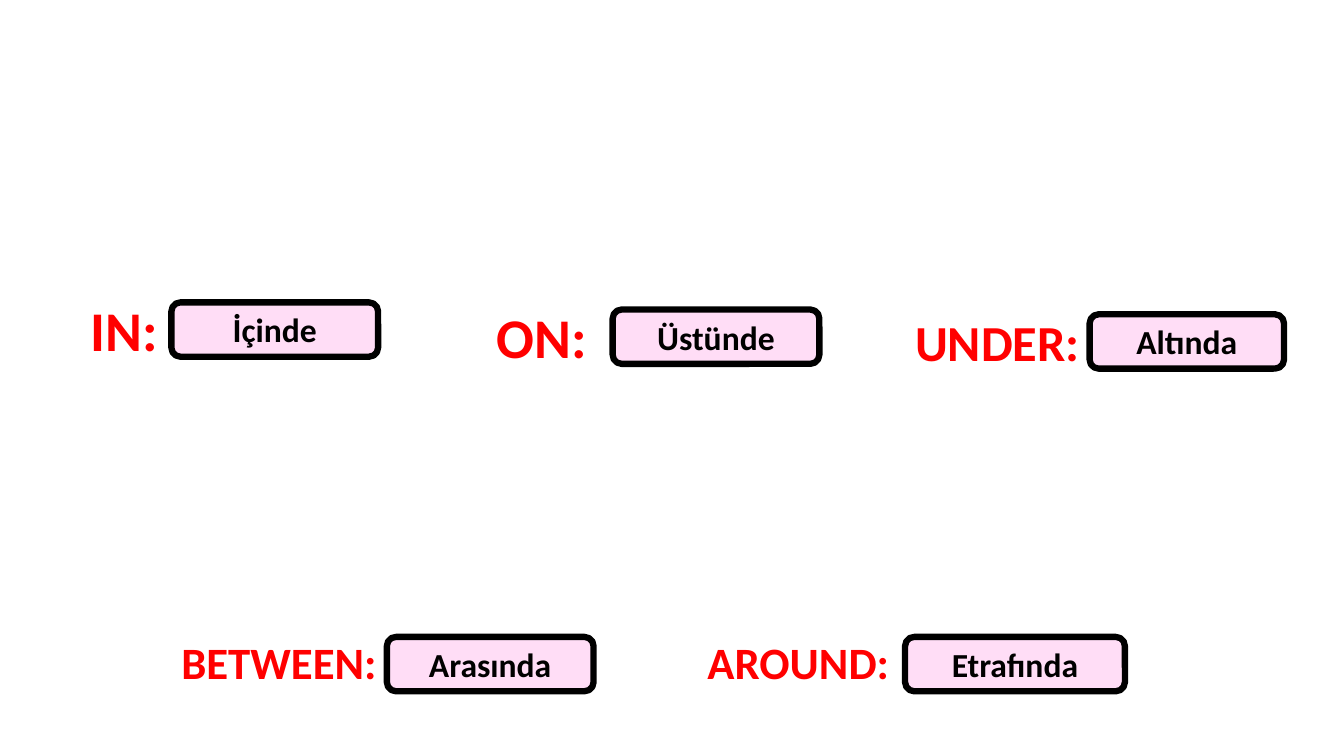
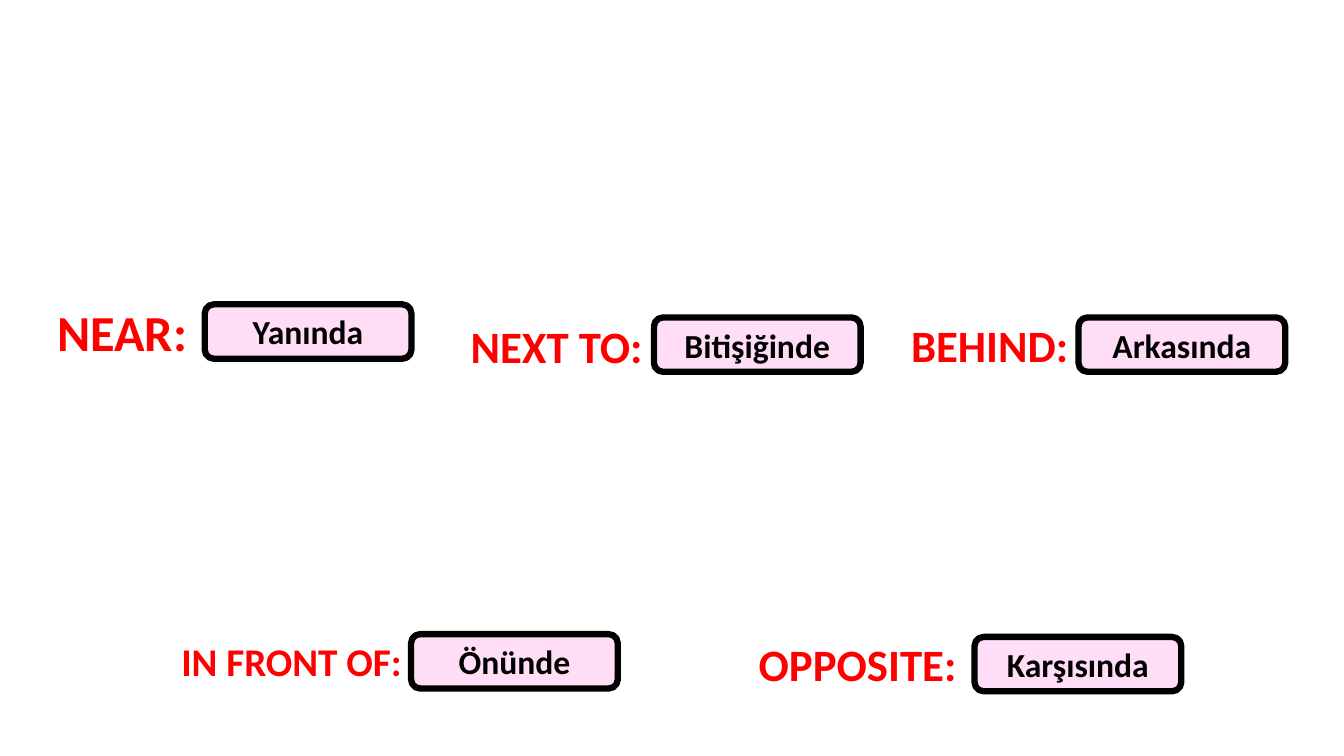
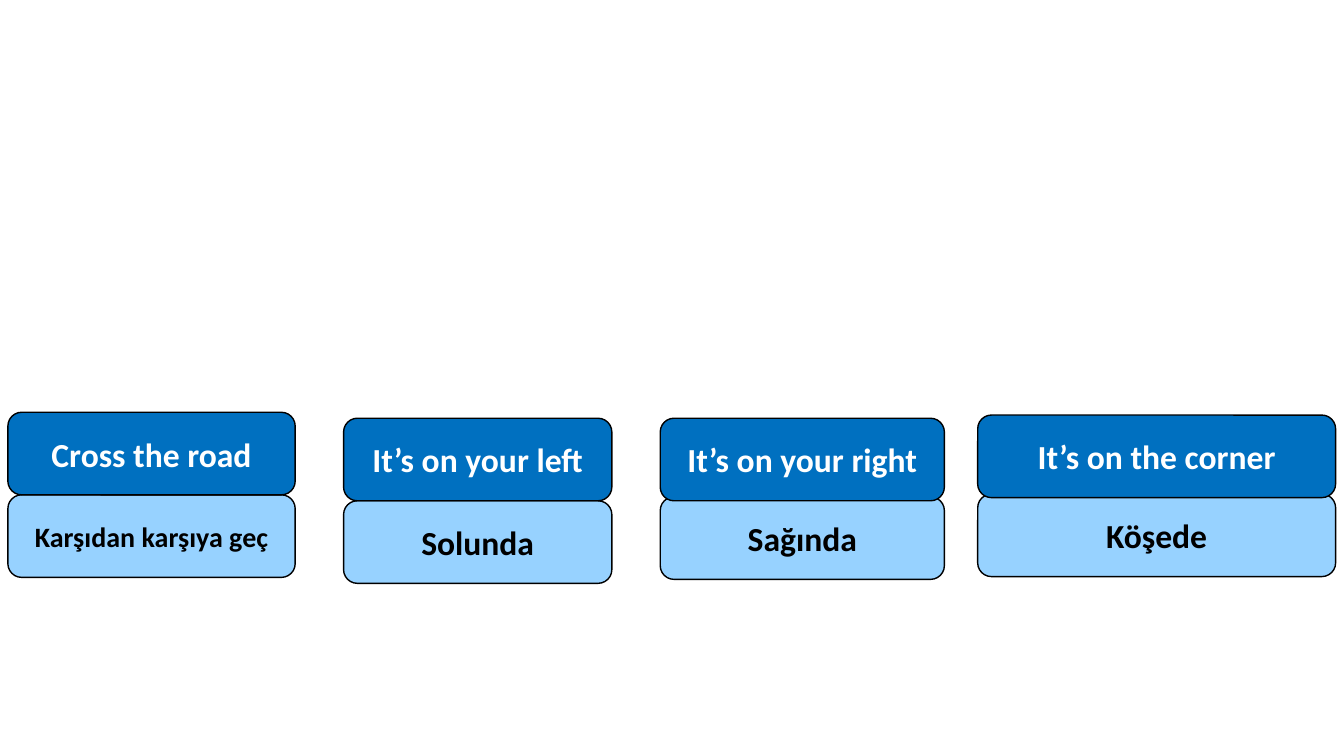
from pptx import Presentation
from pptx import util as u
from pptx.dml.color import RGBColor
from pptx.enum import shapes, text


def color(value):
    return RGBColor.from_string(value)


class Deck:
    """Hold the shared style and the slide being filled."""

    FONT = "Calibri"
    RED, BLACK, WHITE = "FF0000", "000000", "FFFFFF"
    PINK, BLUE, LIGHT_BLUE = "FFDDF6", "0070C0", "97D2FF"
    LABEL_WIDTH = 7.26
    ANSWER_HEIGHT = 1.37
    PHRASE_HEIGHT = 2.08

    def __init__(self):
        self.presentation = Presentation()
        self.presentation.slide_width = u.Cm(33.87)
        self.presentation.slide_height = u.Cm(19.05)
        self.slide = None

    def add_slide(self):
        self.slide = self.presentation.slides.add_slide(self.presentation.slide_layouts[6])

    def set_text(self, frame, words, size, ink, align):
        frame.word_wrap = True
        paragraph = frame.paragraphs[0]
        paragraph.text = words
        paragraph.alignment = align
        font = paragraph.font
        font.name, font.size, font.bold = self.FONT, u.Pt(size), True
        font.color.rgb = color(ink)

    def label(self, words, left, top, size):
        height = size * 1.2 / 72 * 2.54 + 0.25
        box = self.slide.shapes.add_textbox(
            u.Cm(left), u.Cm(top), u.Cm(self.LABEL_WIDTH), u.Cm(height))
        self.set_text(box.text_frame, words, size, self.RED, text.PP_ALIGN.LEFT)
        box.text_frame.auto_size = text.MSO_AUTO_SIZE.SHAPE_TO_FIT_TEXT

    def card(self, words, left, top, width, height, fill, ink=BLACK, line=1, size=24):
        shape = self.slide.shapes.add_shape(
            shapes.MSO_SHAPE.ROUNDED_RECTANGLE,
            u.Cm(left), u.Cm(top), u.Cm(width), u.Cm(height))
        shape.shadow.inherit = False
        shape.fill.solid()
        shape.fill.fore_color.rgb = color(fill)
        shape.line.color.rgb = color(self.BLACK)
        shape.line.width = u.Pt(line)
        shape.text_frame.vertical_anchor = text.MSO_ANCHOR.MIDDLE
        self.set_text(shape.text_frame, words, size, ink, text.PP_ALIGN.CENTER)

    def answer(self, words, left, top, width=5.21):
        self.card(words, left, top, width, self.ANSWER_HEIGHT, self.PINK, line=4.5)

    def phrase(self, english, turkish, left, width, top, turkish_top, turkish_size=24):
        self.card(turkish, left, turkish_top, width, self.PHRASE_HEIGHT,
                  self.LIGHT_BLUE, size=turkish_size)
        self.card(english, left, top, width, self.PHRASE_HEIGHT, self.BLUE, self.WHITE)


PREPOSITION_SLIDES = [
    [
        (("IN:", 2.03, 7.32, 40), ("İçinde", 4.32, 7.62)),
        (("ON:", 12.27, 7.49, 40), ("Üstünde", 15.44, 7.8)),
        (("UNDER:", 22.81, 7.72, 36), ("Altında", 27.46, 7.92, 4.9)),
        (("BETWEEN:", 4.32, 15.88, 32), ("Arasında", 9.75, 16.05)),
        (("AROUND:", 17.58, 15.88, 32), ("Etrafında", 22.81, 16.05, 5.54)),
    ],
    [
        (("NEAR:", 1.19, 7.47, 36), ("Yanında", 5.16, 7.67)),
        (("NEXT TO:", 11.61, 7.9, 32), ("Bitişiğinde", 16.48, 8)),
        (("BEHIND:", 22.71, 7.87, 32), ("Arkasında", 27.18, 8)),
        (("IN FRONT OF:", 4.32, 15.93, 28), ("Önünde", 10.36, 15.98)),
        (("OPPOSITE:", 18.87, 15.93, 32), ("Karşısında", 24.56, 16.05)),
    ],
]

DIRECTIONS = [
    ("Cross the road", "Karşıdan karşıya geç", 0.2, 7.24, 10.39, 12.47, 20),
    ("It’s on your left", "Solunda", 8.66, 6.76, 10.54, 12.62),
    ("It’s on your right", "Sağında", 16.64, 7.16, 10.54, 12.52),
    ("It’s on the corner", "Köşede", 24.64, 9.02, 10.46, 12.45),
]


def main():
    deck = Deck()
    for prepositions in PREPOSITION_SLIDES:
        deck.add_slide()
        for label, answer in prepositions:
            deck.label(*label)
            deck.answer(*answer)
    deck.add_slide()
    for direction in DIRECTIONS:
        deck.phrase(*direction)
    deck.presentation.save("out.pptx")


if __name__ == "__main__":
    main()
